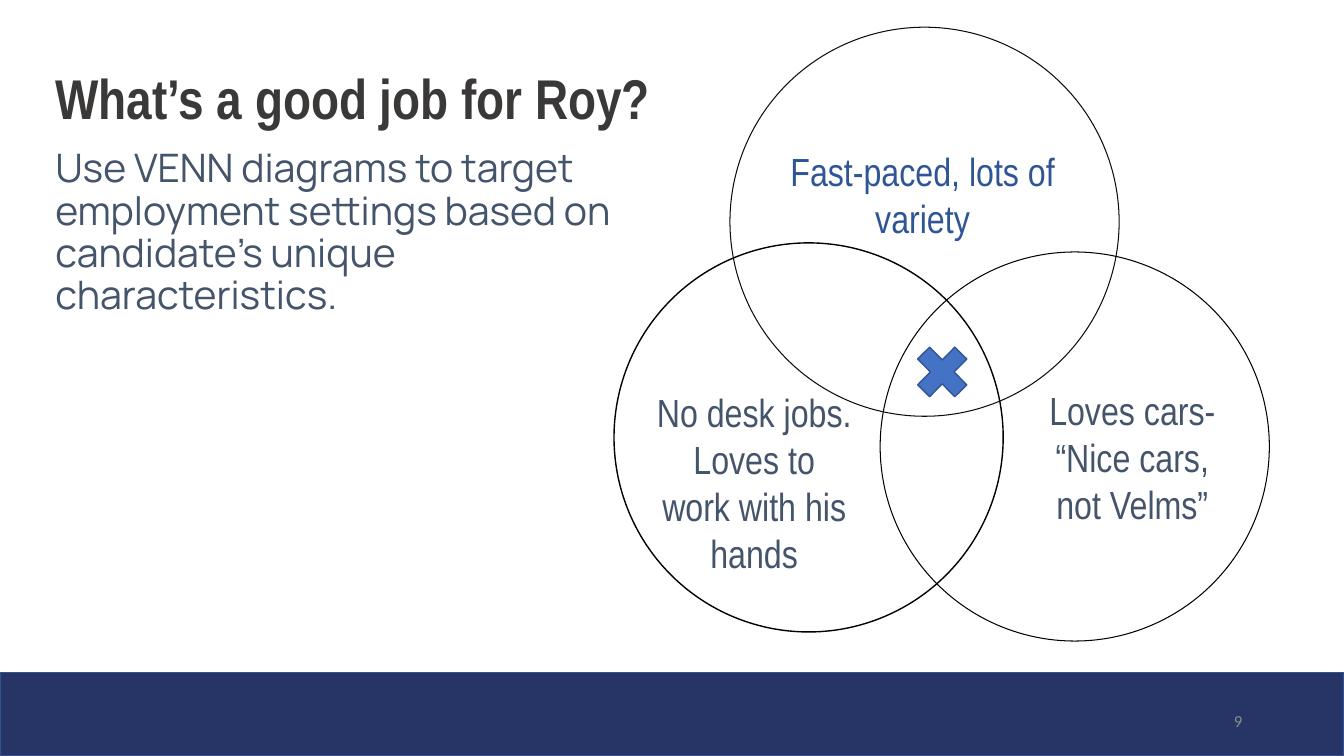
from pptx import Presentation
from pptx.dml.color import RGBColor
from pptx.enum import shapes, text
from pptx.util import Inches, Pt

# Content
TITLE = "What’s a good job for Roy?"
INTRO = "Use VENN diagrams to target employment settings based on candidate’s unique characteristics."
PAGE = "9"
DIAMETER = 3.86
# Circle left, top, line colour, line width
CIRCLES = [
    (6.09, 2.41, "000000", 1),
    (7.24, 0.27, "0D0D0D", 0.75),
    (8.73, 2.5, "000000", 0.75),
]
# Wording, box, colour, anchor
TRAITS = [
    ("Fast-paced, lots of variety", (7.65, 1.41, 3, 1.04), "2F5597", "MIDDLE"),
    ("Loves cars- “Nice cars, not Velms”", (10.23, 3.78, 2, 1.51), "44546A", "MIDDLE"),
    ("No desk jobs. Loves to work with his hands", (6.4, 3.8, 2.16, 1.99), "44546A", "TOP"),
]


def color(value):
    return RGBColor.from_string(value)


def write(holder, wording, look, align="LEFT", anchor="TOP", spacing=1.0):
    frame = holder.text_frame
    frame.word_wrap = True
    frame.auto_size = text.MSO_AUTO_SIZE.NONE
    frame.vertical_anchor = text.MSO_ANCHOR[anchor]
    paragraph = frame.paragraphs[0]
    paragraph.alignment = text.PP_ALIGN[align]
    paragraph.line_spacing = spacing
    run = paragraph.add_run()
    run.text = wording
    for key, value in look.items():
        if key == "color":
            run.font.color.rgb = color(value)
        else:
            setattr(run.font, key, value)


def add_shape(kind, box, line, width, fill=None):
    shape = slide.shapes.add_shape(kind, *map(Inches, box))
    shape.shadow.inherit = False
    if fill:
        shape.fill.solid()
        shape.fill.fore_color.rgb = color(fill)
    else:
        shape.fill.background()
    shape.line.color.rgb = color(line)
    shape.line.width = Pt(width)


def add_text(wording, box, look, **layout):
    write(slide.shapes.add_textbox(*map(Inches, box)), wording, look, **layout)


deck = Presentation()
deck.slide_width, deck.slide_height = Inches(13.33), Inches(7.5)
slide = deck.slides.add_slide(deck.slide_layouts[5])

# Footer band and page number
add_shape(shapes.MSO_SHAPE.RECTANGLE, (0, 6.67, 13.33, 0.83), "325491", 1, "273466")
add_text(PAGE, (9.42, 6.95, 3, 0.4), dict(size=Pt(12), name="Calibri", color="8C8C8C"),
         align="RIGHT", anchor="MIDDLE")

# Title and introduction
title = slide.shapes.title
title.left, title.top, title.width, title.height = map(Inches, (0.45, 0.28, 11.5, 1.45))
write(title, TITLE, dict(size=Pt(40), name="Arial Narrow", bold=True, color="3B3838"),
      anchor="MIDDLE", spacing=0.9)
add_text(INTRO, (0.45, 1.43, 6.16, 4.53), dict(size=Pt(28), name="Manrope", color="44546A"),
         spacing=0.9)

# Venn diagram
for left, top, line, width in CIRCLES:
    add_shape(shapes.MSO_SHAPE.OVAL, (left, top, DIAMETER, DIAMETER), line, width)
for trait, box, shade, anchor in TRAITS:
    add_text(trait, box, dict(size=Pt(28), name="Arial Narrow", color=shade),
             align="CENTER", anchor=anchor)

# Mark where all three circles meet
add_shape(shapes.MSO_SHAPE.MATH_MULTIPLY, (8.99, 3.33, 0.71, 0.72), "325491", 1, "4472C4")

deck.save("out.pptx")
